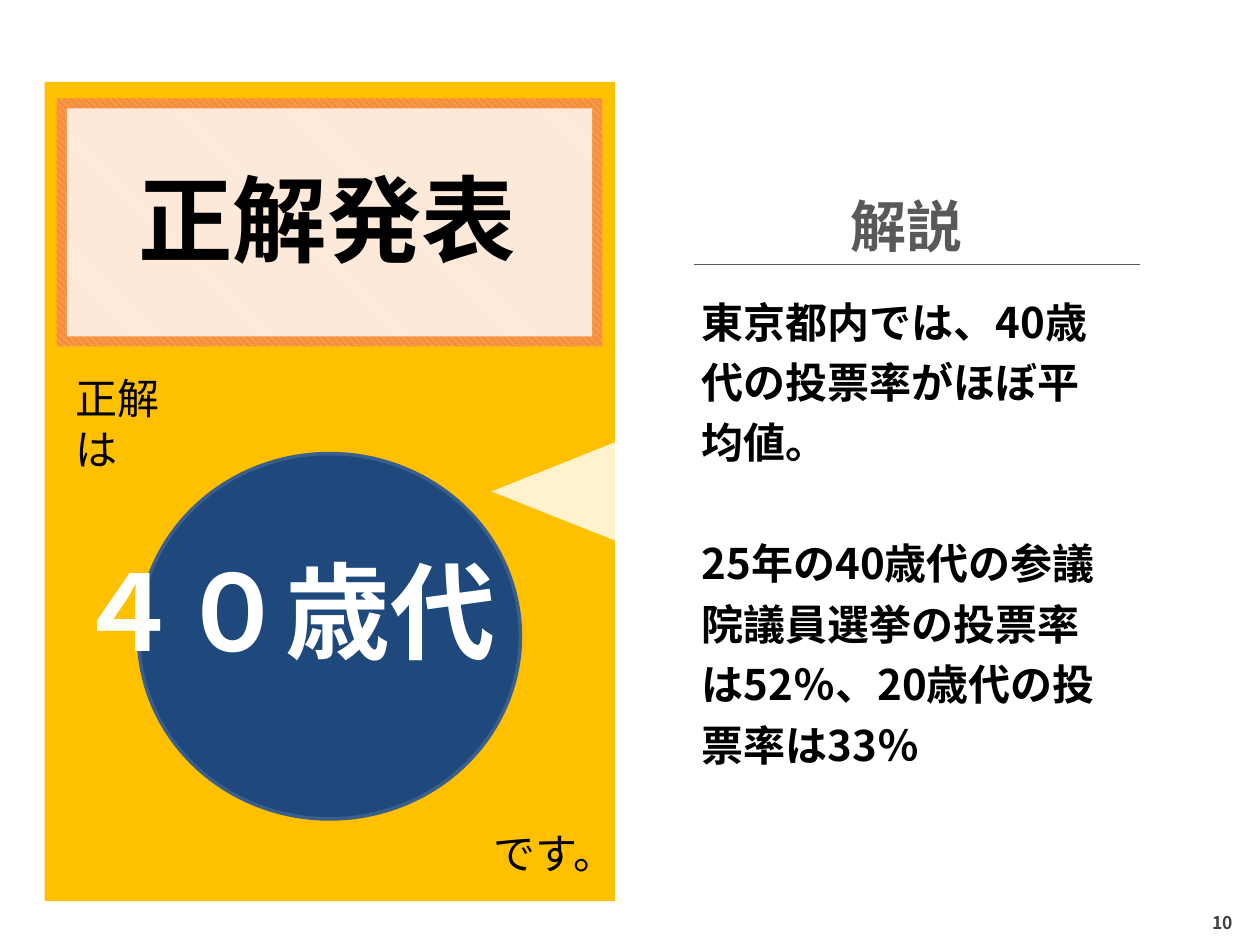
import pptx
import pptx.util
import pptx.dml.color
import pptx.enum.dml
import pptx.enum.shapes
import pptx.enum.text
import pptx.oxml.ns
import lxml.etree

Pt = pptx.util.Pt
KIND = pptx.enum.shapes.MSO_SHAPE
ALIGN = pptx.enum.text.PP_ALIGN
ANCHOR = pptx.enum.text.MSO_ANCHOR
FACE = "Noto Sans CJK JP"
A = pptx.oxml.ns.qn("a:p")[:-1]

HEAD = "正解発表"
NOTES = [
    "東京都内では、40歳代の投票率がほぼ平均値。",
    "25年の40歳代の参議院議員選挙の投票率は52％、20歳代の投票率は33％",
]
PANELS = [
    (KIND.RECTANGLE, (13, 13.7, 694.8, 513.4), "FFFFFF", 20),
    (KIND.RECTANGLE, (25.5, 46.8, 351.4 - 25.5, 468), "FFC000", 100),
    (KIND.RECTANGLE, (32.4, 56.2, 311.8, 141.8), "hatch", 100),
    (KIND.RECTANGLE, (38.2, 61.9, 300.2, 130.3), "FFFFFF", 80),
    (KIND.ROUNDED_RECTANGLE, (364.3, 46.8, 330.5, 468), "FFFFFF", 80),
    (KIND.ISOSCELES_TRIANGLE, (290.2, 234.7, 73.4, 92.2), "FFFFFF", 80),
]
LABELS = [
    ("正解は", (36, 209.5, 83.5, 36), 24, "000000", False, ALIGN.LEFT),
    ("です。", (275, 469.4, 71.3, 36), 24, "000000", False, ALIGN.LEFT),
    ("解説", (478.8, 105.8, 79.2, 46), 32, "595959", True, ALIGN.LEFT),
    ("４０歳代", (36, 308.9, 303.1, 80), 60, "FFFFFF", True, ALIGN.JUSTIFY),
]


def tint(code):
    return pptx.dml.color.RGBColor.from_string(code)


def paint(shape, code, alpha=100):
    shape.shadow.inherit = False
    shape.line.fill.background()
    if code == "hatch":
        shape.fill.patterned()
        shape.fill.pattern = pptx.enum.dml.MSO_PATTERN.WIDE_DOWNWARD_DIAGONAL
        shape.fill.fore_color.rgb = tint("E46C0A")
        shape.fill.back_color.rgb = tint("F79646")
        return
    shape.fill.solid()
    shape.fill.fore_color.rgb = tint(code)
    if alpha < 100:
        color = shape._element.spPr.find(f"{A}solidFill/{A}srgbClr")
        lxml.etree.SubElement(color, A + "alpha", val=str(alpha * 1000))


def add(slide, kind, box, code, alpha=100):
    shape = slide.shapes.add_shape(kind, *map(Pt, box))
    paint(shape, code, alpha)
    return shape


def style(par, size, code, bold, align):
    par.alignment = align
    font = par.font
    font.size, font.bold, font.name = Pt(size), bold, FACE
    font.color.rgb = tint(code)
    lxml.etree.SubElement(font._element, A + "ea", typeface=FACE)


def write(shape, lines, size, code, bold, align, anchor=ANCHOR.TOP):
    frame = shape.text_frame
    frame.text = "\n".join(lines)
    frame.word_wrap = True
    frame.auto_size = pptx.enum.text.MSO_AUTO_SIZE.NONE
    frame.vertical_anchor = anchor
    for par in frame.paragraphs:
        style(par, size, code, bold, align)


def place(slide, shape, box):
    shape.left, shape.top, shape.width, shape.height = map(Pt, box)
    slide.shapes._spTree.append(shape._element)


def label(slide, text, box, *look):
    write(slide.shapes.add_textbox(*map(Pt, box)), [text], *look)


def main():
    deck = pptx.Presentation()
    deck.slide_width, deck.slide_height = Pt(720), Pt(540)
    slide = deck.slides.add_slide(deck.slide_layouts[1])
    title, body = slide.placeholders

    base, *_, card, wedge = [add(slide, *panel) for panel in PANELS]
    base.line.color.rgb = tint("FFFFFF")
    base.line.width = Pt(0.5)
    card.adjustments[0] = 0.06
    wedge.rotation = 270

    page = add(slide, KIND.RECTANGLE, (677.5, 514.8, 42.5, 25.2), "FFFFFF")
    write(page, ["10"], 10, "404040", True, ALIGN.CENTER, ANCHOR.MIDDLE)

    place(slide, title, (70.6, 88.6, 232.6, 72.7))
    write(title, [HEAD], 54, "000000", True, ALIGN.CENTER)

    rule = slide.shapes.add_connector(
        pptx.enum.shapes.MSO_CONNECTOR.STRAIGHT,
        Pt(396.7), Pt(151.2), Pt(651.6), Pt(151.2))
    rule.line.color.rgb = tint("595959")
    rule.line.width = Pt(0.75)
    lxml.etree.SubElement(rule._element.spPr, A + "effectLst")

    place(slide, body, (393.8, 159.8, 254.2, 251.3))
    write(body, NOTES, 24, "000000", True, ALIGN.LEFT)
    for par, gap in zip(body.text_frame.paragraphs, (0, 34.5)):
        par.line_spacing = 1.2
        par.space_before = Pt(gap)
        props = par._p.get_or_add_pPr()
        props.set("marL", "0")
        props.set("indent", "0")
        props.find(A + "defRPr").addprevious(
            lxml.etree.Element(A + "buNone"))

    disc = add(slide, KIND.OVAL, (79.2, 259.2, 218.2, 208.8), "1F497D")
    disc.line.color.rgb = tint("3A5F8C")
    disc.line.width = Pt(2)

    for item in LABELS:
        label(slide, *item)
    deck.save("out.pptx")


if __name__ == "__main__":
    main()
